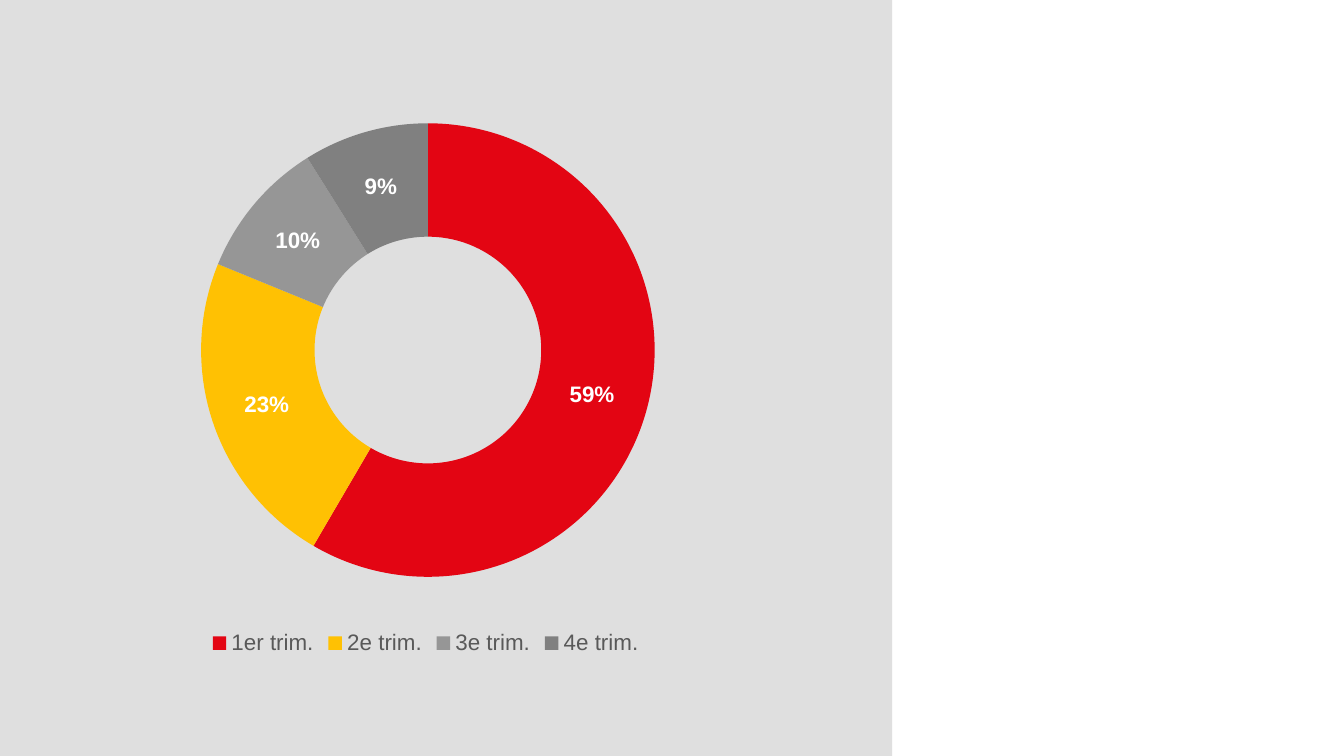
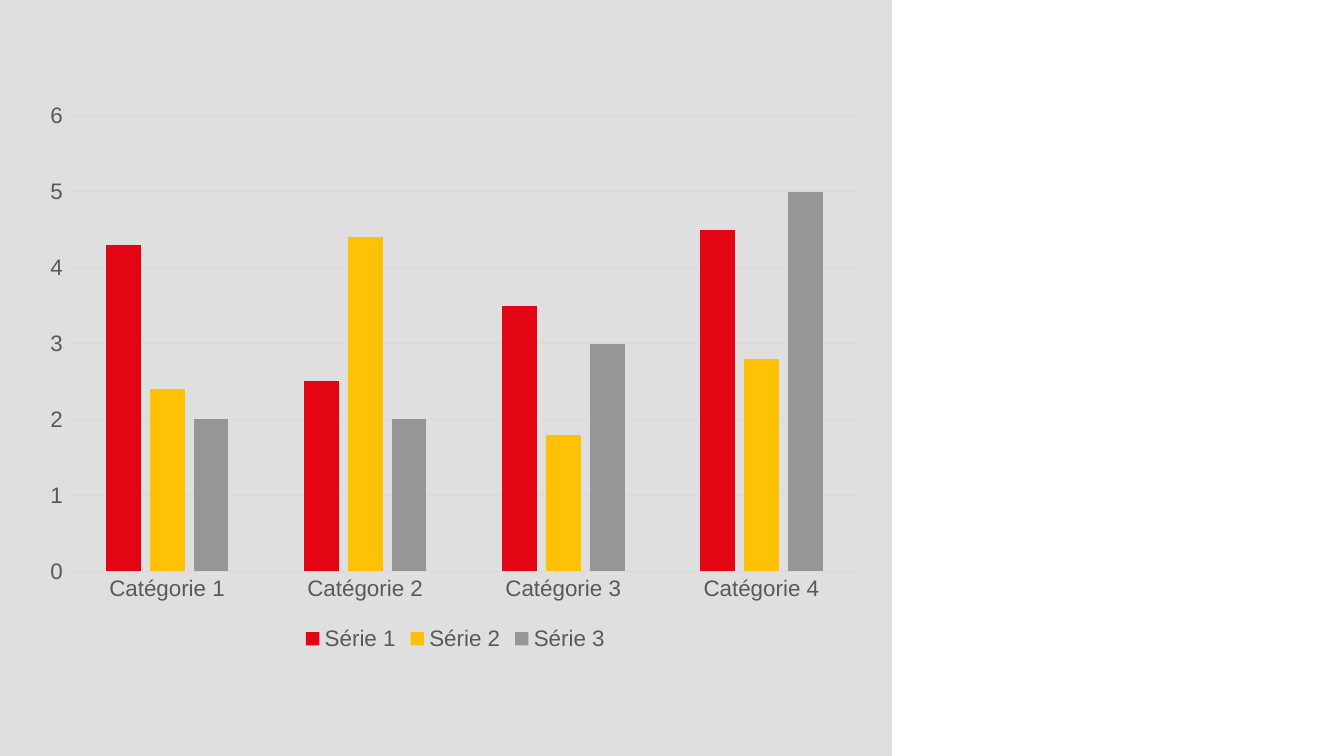
from lxml import etree
from pptx import Presentation
from pptx.chart.data import CategoryChartData
from pptx.dml.color import RGBColor
from pptx.enum.chart import XL_CHART_TYPE as ChartType
from pptx.enum.chart import XL_LEGEND_POSITION as LegendPos
from pptx.enum.chart import XL_TICK_MARK as TickMark
from pptx.enum.shapes import MSO_SHAPE as Shape
from pptx.oxml.ns import qn
from pptx.util import Pt

# Content
QUARTERS = ["1er trim.", "2e trim.", "3e trim.", "4e trim."]
QUARTER_SHARES = [("Series 1", [59, 23, 10, 9])]
CATEGORIES = ["Catégorie 1", "Catégorie 2", "Catégorie 3", "Catégorie 4"]
CATEGORY_SERIES = [
    ("Série 1", [4.3, 2.5, 3.5, 4.5]),
    ("Série 2", [2.4, 4.4, 1.8, 2.8]),
    ("Série 3", [2, 2, 3, 5]),
]

# Shared look
COLORS = {
    "page": "FFFFFF", "band": "DFDFDF", "grid": "D9D9D9",
    "text": "595959", "label": "FFFFFF", "base": "000000",
    "red": "E30513", "yellow": "FFC103", "grey": "969696", "dark": "808080",
}
PALETTE = ["red", "yellow", "grey", "dark"]
SLIDE_W, SLIDE_H, BAND_W = 720, 405, 478

# Left, top, width, height in points
DOUGHNUT_BOX = (0, 28, 458.5, 327)
COLUMNS_BOX = (18, 49.5, 452, 302)

# Fractions of the chart area
DOUGHNUT_PLOT = {"x": 0.235, "y": 0.116, "w": 0.53, "h": 0.744}
DOUGHNUT_LEGEND = {"x": 0.24, "y": 0.94}


def rgb(name):
    return RGBColor.from_string(COLORS[name])


def format_text(text, size=12, color="text", bold=False, face="Arial"):
    text.font.size = Pt(size)
    text.font.bold = bold
    text.font.name = face
    text.font.color.rgb = rgb(color)


def paint(part, color):
    part.format.fill.solid()
    part.format.fill.fore_color.rgb = rgb(color)


def rule(line):
    line.color.rgb = rgb("grid")
    line.width = Pt(0.75)


def add_band_slide(deck):
    slide = deck.slides.add_slide(deck.slide_layouts[6])
    slide.background.fill.solid()
    slide.background.fill.fore_color.rgb = rgb("page")
    band = slide.shapes.add_shape(Shape.RECTANGLE, 0, 0, Pt(BAND_W), Pt(SLIDE_H))
    band.shadow.inherit = False
    band.fill.solid()
    band.fill.fore_color.rgb = rgb("band")
    band.line.fill.background()
    return slide


def add_chart(slide, kind, box, categories, series, legend_position):
    data = CategoryChartData()
    data.categories = categories
    for name, values in series:
        data.add_series(name, values)
    chart = slide.shapes.add_chart(kind, *map(Pt, box), data).chart
    chart.has_title = False
    format_text(chart, size=10, color="base", face="Calibri")
    chart.has_legend = True
    chart.legend.position = legend_position
    chart.legend.include_in_layout = False
    format_text(chart.legend)
    return chart


def place(parent, index, fractions, inner=False):
    """Give a chart part a manual layout."""
    for old in parent.findall(qn("c:layout")):
        parent.remove(old)
    layout = etree.Element(qn("c:layout"))
    manual = etree.SubElement(layout, qn("c:manualLayout"))
    settings = [("layoutTarget", "inner")] if inner else []
    settings += [("xMode", "edge"), ("yMode", "edge"), *fractions.items()]
    for tag, value in settings:
        etree.SubElement(manual, qn(f"c:{tag}")).set("val", str(value))
    parent.insert(index, layout)


def add_doughnut(slide):
    chart = add_chart(slide, ChartType.DOUGHNUT, DOUGHNUT_BOX,
                      QUARTERS, QUARTER_SHARES, LegendPos.TOP)
    plot = chart.plots[0]
    plot.vary_by_categories = True
    shares = plot.series[0]
    for index, color in enumerate(PALETTE):
        paint(shares.points[index], color)
    labels = shares.data_labels
    labels.show_value = True
    labels.number_format = '0"%"'
    labels.number_format_is_linked = False
    format_text(labels, color="label", bold=True)
    root = chart.element if hasattr(chart, "element") else chart._chartSpace
    place(root.find(".//" + qn("c:plotArea")), 0, DOUGHNUT_PLOT, inner=True)
    place(root.find(".//" + qn("c:legend")), 1, DOUGHNUT_LEGEND)


def add_columns(slide):
    chart = add_chart(slide, ChartType.COLUMN_CLUSTERED, COLUMNS_BOX,
                      CATEGORIES, CATEGORY_SERIES, LegendPos.BOTTOM)
    plot = chart.plots[0]
    plot.vary_by_categories = False
    plot.gap_width, plot.overlap = 219, -27
    for series, color in zip(plot.series, PALETTE):
        paint(series, color)
    for axis in (chart.category_axis, chart.value_axis):
        axis.major_tick_mark = axis.minor_tick_mark = TickMark.NONE
        format_text(axis.tick_labels)
    rule(chart.category_axis.format.line)
    scale = chart.value_axis
    scale.minimum_scale, scale.maximum_scale, scale.major_unit = 0, 6, 1
    scale.format.line.fill.background()
    rule(scale.major_gridlines.format.line)


def main():
    deck = Presentation()
    deck.slide_width, deck.slide_height = Pt(SLIDE_W), Pt(SLIDE_H)
    for add_content in (add_doughnut, add_columns):
        add_content(add_band_slide(deck))
    deck.save("out.pptx")


if __name__ == "__main__":
    main()
